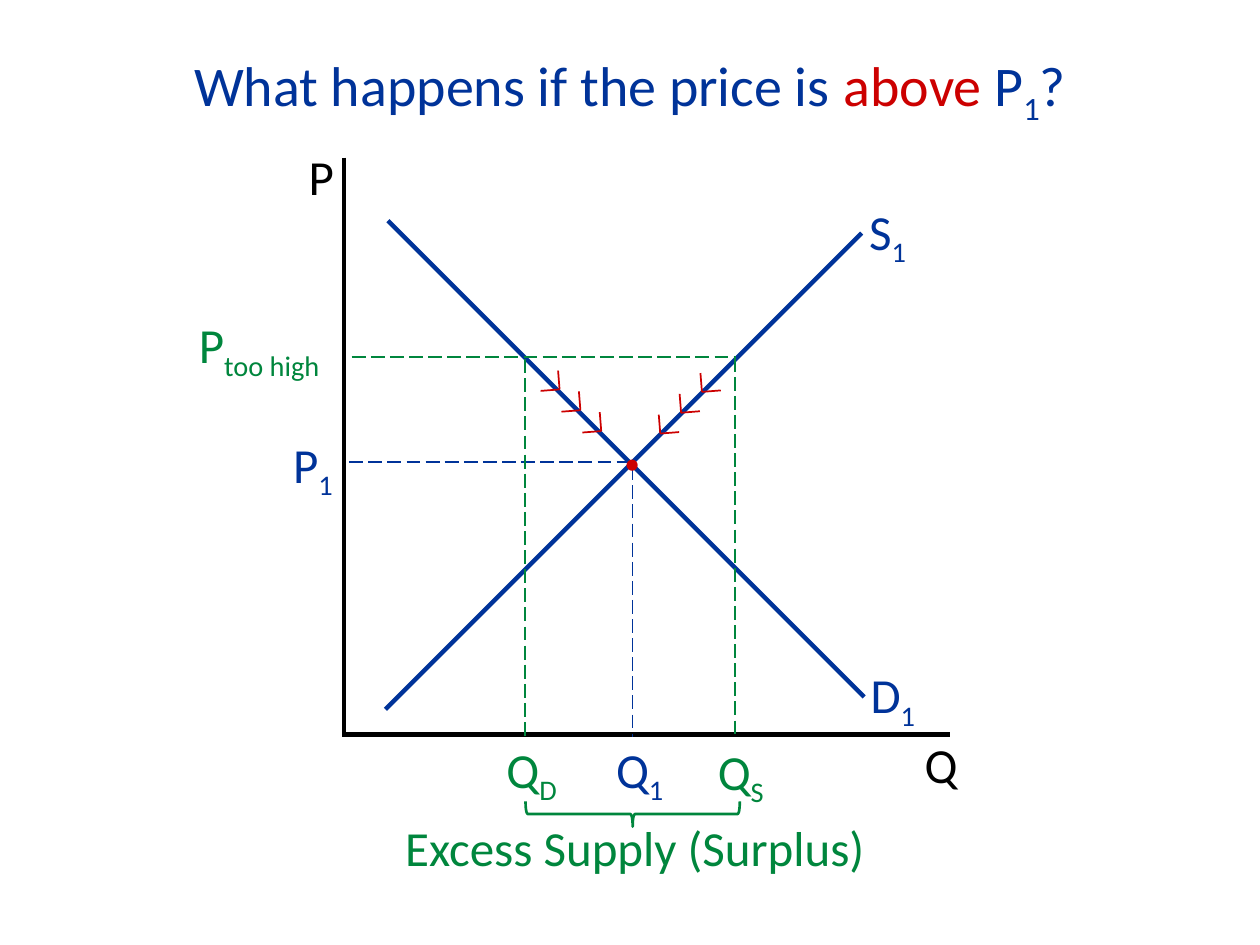
from dataclasses import dataclass

from lxml import etree
from pptx import Presentation
from pptx import util as u
from pptx.dml.color import RGBColor
from pptx.enum import dml, shapes, text
from pptx.oxml import ns


@dataclass(frozen=True)
class Theme:
    font: str = "Calibri"
    blue: str = "003399"
    green: str = "00863D"
    red: str = "CC0000"
    black: str = "000000"
    title_size: int = 32
    label_size: int = 28
    dot_size: int = 18


theme = Theme()
prs = Presentation()
prs.slide_width, prs.slide_height = u.Cm(25.4), u.Cm(19.05)
slide = prs.slides.add_slide(prs.slide_layouts[5])


def write(words, *, paragraph, color, size=theme.label_size, subscript=False):
    run = paragraph.add_run()
    run.text = words
    run.font.name = theme.font
    run.font.size = u.Pt(size)
    run.font.color.rgb = RGBColor.from_string(color)
    if subscript:
        run._r.get_or_add_rPr().set("baseline", "-25000")


def draw_line(x1, y1, x2, y2, color, width, dashed=False):
    line = slide.shapes.add_connector(
        shapes.MSO_CONNECTOR.STRAIGHT, u.Cm(x1), u.Cm(y1), u.Cm(x2), u.Cm(y2))
    line.line.color.rgb = RGBColor.from_string(color)
    line.line.width = u.Pt(width)
    if dashed:
        line.line.dash_style = dml.MSO_LINE.LONG_DASH
    etree.SubElement(line._element.spPr, ns.qn("a:effectLst"))


# Title
title = slide.shapes.title
title.left, title.top, title.width, title.height = (
    u.Cm(1.78), u.Cm(0.97), u.Cm(21.84), u.Cm(1.63))
title.text_frame.vertical_anchor = text.MSO_ANCHOR.MIDDLE
title.text_frame.auto_size = text.MSO_AUTO_SIZE.NONE
question = title.text_frame.paragraphs[0]
question.alignment = text.PP_ALIGN.CENTER
for words, color, subscript in [
    ("What happens if the price is ", theme.blue, False),
    ("above", theme.red, False),
    (" P", theme.blue, False),
    ("1", theme.blue, True),
    ("?", theme.blue, False),
]:
    write(words, paragraph=question, color=color, size=theme.title_size, subscript=subscript)

# Supply and demand curves, then the axes
for ends in [(7.77, 14.3, 17.37, 4.7), (7.82, 4.45, 17.42, 14.05)]:
    draw_line(*ends, theme.blue, 2.5)
for ends in [(6.93, 3.18, 6.93, 14.86), (6.96, 14.81, 19.15, 14.81)]:
    draw_line(*ends, theme.black, 2.5)

# Dashed guides: equilibrium in blue, price too high in green
for *ends, color in [
    (7.04, 9.32, 12.7, 9.32, theme.blue),
    (12.75, 9.4, 12.75, 14.86, theme.blue),
    (7.09, 7.19, 14.83, 7.19, theme.green),
    (10.59, 7.24, 10.59, 14.86, theme.green),
    (14.81, 7.21, 14.81, 14.83, theme.green),
]:
    draw_line(*ends, color, 1, dashed=True)

# Surplus brace
brace = slide.shapes.add_shape(
    shapes.MSO_SHAPE.LEFT_BRACE, u.Cm(12.5), u.Cm(14.25), u.Cm(0.51), u.Cm(4.32))
brace.rotation = 270
brace.shadow.inherit = False
brace.fill.background()
brace.line.color.rgb = RGBColor.from_string(theme.green)
brace.line.width = u.Pt(1.5)

# Arrowheads running down each curve to the equilibrium
for tip_x, tip_y, step_x, side_wing in [
    (11.28, 7.85, 0.42, (-0.38, 0.03)),
    (14.15, 7.9, -0.42, (0.38, -0.03)),
]:
    for i in range(3):
        x, y = tip_x + i * step_x, tip_y + i * 0.42
        for dx, dy in [side_wing, (-0.03, -0.38)]:
            draw_line(x, y, x + dx, y + dy, theme.red, 1)

# Labels and the equilibrium dot: main text, subscript, box, line spacing
for main, sub, left, top, width, height, color, size, spacing in [
    ("D", "1", 17.3, 13.28, 1.47, 1.45, theme.blue, theme.label_size, 1),
    ("S", "1", 17.27, 3.94, 1.47, 1.45, theme.blue, theme.label_size, 1),
    ("Q", "", 18.39, 14.68, 1.3, 1.45, theme.black, theme.label_size, 1),
    ("P", "", 5.97, 3.05, 1.14, 1.24, theme.black, theme.label_size, 0.8),
    ("P", "1", 5.66, 8.76, 1.47, 1.24, theme.blue, theme.label_size, 0.8),
    ("Q", "1", 12.17, 14.91, 1.9, 1.24, theme.blue, theme.label_size, 0.8),
    ("P", "too high", 3.76, 6.35, 3.38, 1.24, theme.green, theme.label_size, 0.8),
    ("Q", "D", 9.96, 14.91, 1.9, 1.24, theme.green, theme.label_size, 0.8),
    ("Q", "S", 14.22, 14.94, 1.9, 1.24, theme.green, theme.label_size, 0.8),
    ("Excess Supply (Surplus)", "", 7.92, 16.36, 10.08, 1.45,
     theme.green, theme.label_size, 1),
    ("•", "", 12.34, 8.81, 1.37, 1.02, theme.red, theme.dot_size, 1),
]:
    label = slide.shapes.add_textbox(u.Cm(left), u.Cm(top), u.Cm(width), u.Cm(height))
    label.text_frame.word_wrap = True
    label.text_frame.auto_size = text.MSO_AUTO_SIZE.SHAPE_TO_FIT_TEXT
    caption = label.text_frame.paragraphs[0]
    caption.line_spacing = spacing
    write(main, paragraph=caption, color=color, size=size)
    if sub:
        write(sub, paragraph=caption, color=color, size=size, subscript=True)

prs.save("out.pptx")
